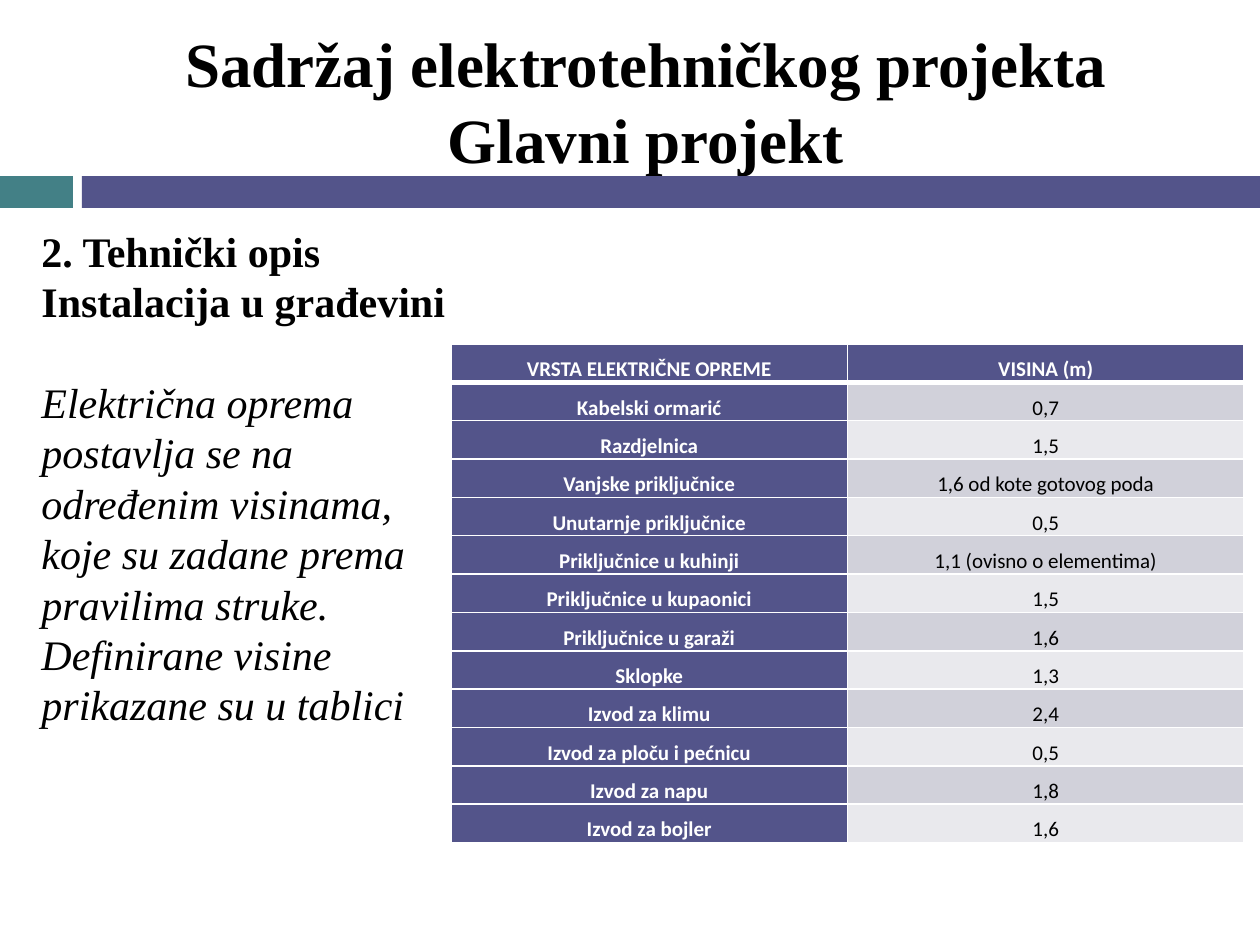
from lxml.etree import SubElement
from pptx import Presentation
from pptx.dml.color import RGBColor
from pptx.enum.shapes import MSO_SHAPE
from pptx.enum.text import MSO_ANCHOR, MSO_AUTO_SIZE, PP_ALIGN
from pptx.oxml.ns import qn
from pptx.util import Pt

PX = 914400 / 126
COLORS = {
    "teal": "438086", "indigo": "53548A", "band": "D1D1DA",
    "light": "E9E9ED", "white": "FFFFFF", "black": "000000",
}


def px(*lengths):
    return [round(length * PX) for length in lengths]


def set_font(paragraph, name, size, color, bold=False, italic=False):
    font = paragraph.font
    font.name, font.size, font.bold, font.italic = name, Pt(size), bold, italic
    font.color.rgb = RGBColor.from_string(COLORS[color])


presentation = Presentation()
presentation.slide_width, presentation.slide_height = px(1260, 945)
slide = presentation.slides.add_slide(presentation.slide_layouts[5])

# Two-colour band under the title
for left, width, color in [(0, 73, "teal"), (82, 1178, "indigo")]:
    bar = slide.shapes.add_shape(MSO_SHAPE.RECTANGLE, *px(left, 176, width, 32))
    bar.shadow.inherit = False
    bar.fill.solid()
    bar.fill.fore_color.rgb = RGBColor.from_string(COLORS[color])
    bar.line.fill.background()

# Title
title = slide.shapes.title
title.left, title.top, title.width, title.height = px(84, 32, 1124, 136)
title.text_frame.text = "Sadržaj elektrotehničkog projekta\vGlavni projekt"
title.text_frame.auto_size = MSO_AUTO_SIZE.NONE
title.text_frame.vertical_anchor = MSO_ANCHOR.MIDDLE
title_paragraph = title.text_frame.paragraphs[0]
title_paragraph.alignment = PP_ALIGN.CENTER
set_font(title_paragraph, "Times New Roman", 36, "black", bold=True)

# Description: two bold headings, then italic lines after a gap
headings = ["2. Tehnički opis", "Instalacija u građevini"]
details = [
    "Električna oprema", "postavlja se na", "određenim visinama,",
    "koje su zadane prema", "pravilima struke.", "Definirane visine",
    "prikazane su u tablici",
]
description = slide.shapes.add_textbox(*px(29, 219, 1202, 522)).text_frame
description.word_wrap = True
description.text = "\n".join(headings + details)
for index, paragraph in enumerate(description.paragraphs):
    is_heading = index < len(headings)
    set_font(paragraph, "Times New Roman", 24, "black", is_heading, not is_heading)
description.paragraphs[len(headings)].space_before = Pt(28.8)

# Table of mounting heights
rows = [
    ("VRSTA ELEKTRIČNE OPREME", "VISINA (m)"),
    ("Kabelski ormarić", "0,7"),
    ("Razdjelnica", "1,5"),
    ("Vanjske priključnice", "1,6 od kote gotovog poda"),
    ("Unutarnje priključnice", "0,5"),
    ("Priključnice u kuhinji", "1,1 (ovisno o elementima)"),
    ("Priključnice u kupaonici", "1,5"),
    ("Priključnice u garaži", "1,6"),
    ("Sklopke", "1,3"),
    ("Izvod za klimu", "2,4"),
    ("Izvod za ploču i pećnicu", "0,5"),
    ("Izvod za napu", "1,8"),
    ("Izvod za bojler", "1,6"),
]
table = slide.shapes.add_table(len(rows), 2, *px(451, 344, 793, 499)).table
for row_index, row in enumerate(rows):
    for column_index, text in enumerate(row):
        cell = table.cell(row_index, column_index)
        cell.text = text
        cell.vertical_anchor = MSO_ANCHOR.MIDDLE
        cell.margin_left, cell.margin_right = px(9, 9)
        cell.margin_top = cell.margin_bottom = 0
        is_header = row_index == 0 or column_index == 0
        paragraph = cell.text_frame.paragraphs[0]
        paragraph.alignment = PP_ALIGN.CENTER
        paragraph.line_spacing = 1.5
        set_font(paragraph, "Calibri", 12, "white" if is_header else "black", is_header)

        # White borders, thick below the header row; they precede the fill
        properties = cell._tc.get_or_add_tcPr()
        for side in ("L", "R", "T", "B"):
            thick = (row_index, side) in [(0, "B"), (1, "T")]
            border = SubElement(properties, qn(f"a:ln{side}"), w=str(Pt(3 if thick else 1)))
            border_fill = SubElement(border, qn("a:solidFill"))
            SubElement(border_fill, qn("a:srgbClr"), val=COLORS["white"])
        fill = "indigo" if is_header else "band" if row_index % 2 else "light"
        cell.fill.solid()
        cell.fill.fore_color.rgb = RGBColor.from_string(COLORS[fill])

presentation.save("out.pptx")
